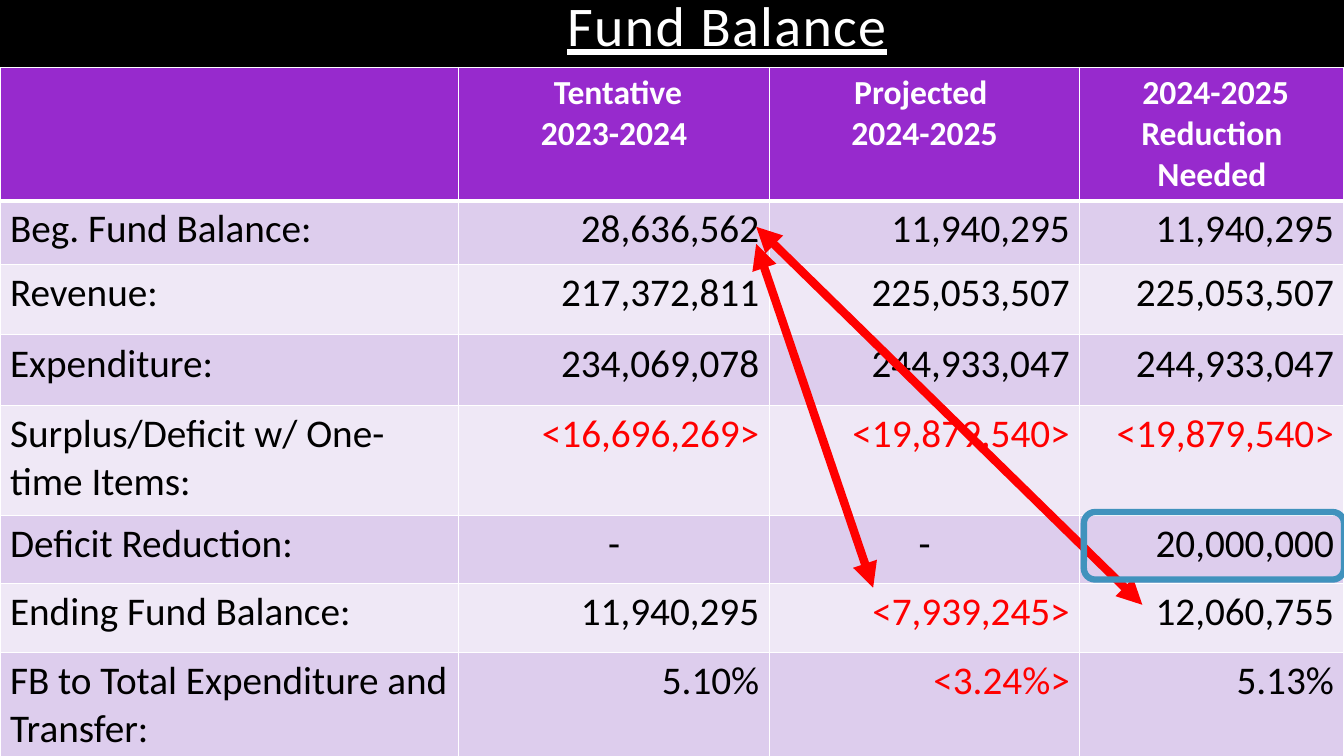
from lxml.etree import SubElement
from pptx import Presentation
from pptx.dml.color import RGBColor
from pptx.enum.shapes import MSO_CONNECTOR, MSO_SHAPE
from pptx.enum.text import MSO_ANCHOR, PP_ALIGN
from pptx.oxml.ns import qn
from pptx.util import Inches, Pt

WHITE, BLACK, RED = "FFFFFF", "000000", "FF0000"
PURPLE, LILAC, PALE_LILAC, BLUE = "972ACD", "DDCDED", "EFE8F6", "4092BD"

COLUMN_WIDTHS = [4.55, 3.08, 3.08, 2.62]
ROW_HEIGHTS = [1.25, 0.63, 0.7, 0.7, 1.09, 0.68, 0.68, 1.09]
ROWS = [
    ["", " Tentative\n2023-2024", "Projected \n2024-2025", " 2024-2025\nReduction Needed"],
    ["Beg. Fund Balance:", "28,636,562", "11,940,295", "11,940,295"],
    ["Revenue:", "217,372,811", "225,053,507", "225,053,507"],
    ["Expenditure:", "234,069,078", "244,933,047", "244,933,047"],
    ["Surplus/Deficit w/ One-time Items:", "<16,696,269>", "<19,879,540>", "<19,879,540>"],
    ["Deficit Reduction:", "-", "-", "20,000,000"],
    ["Ending Fund Balance:", "11,940,295", "<7,939,245>", "12,060,755"],
    ["FB to Total Expenditure and Transfer:", "5.10%", "<3.24%>", "5.13%"],
]


def color(value):
    return RGBColor.from_string(value)


def write(frame, text, size, ink, align, bold=False, underline=False):
    """Fill a text frame, one paragraph per line of text."""
    frame.text = text
    for para in frame.paragraphs:
        para.alignment = align
        para.font.size = Pt(size)
        for span in para.runs:
            span.font.name = "Calibri"
            span.font.size = Pt(size)
            span.font.bold = bold
            span.font.underline = underline
            span.font.color.rgb = color(ink)


deck = Presentation()
deck.slide_width, deck.slide_height = Inches(13.33), Inches(7.5)
page = deck.slides.add_slide(deck.slide_layouts[5])
page.background.fill.solid()
page.background.fill.fore_color.rgb = color(BLACK)

# Title
title = page.shapes.title
title.left, title.top = Inches(1.25), Inches(0.05)
title.width, title.height = Inches(11.92), Inches(0.58)
write(title.text_frame, "Fund Balance", 40, WHITE, PP_ALIGN.CENTER, underline=True)
title.text_frame.vertical_anchor = MSO_ANCHOR.BOTTOM
title_para = title.text_frame.paragraphs[0]
title_para.line_spacing = 0.9
title_para.runs[0].font._element.set("spc", "100")

# Fund table
table = page.shapes.add_table(
    len(ROWS), len(COLUMN_WIDTHS), Inches(0), Inches(0.67),
    Inches(sum(COLUMN_WIDTHS)), Inches(sum(ROW_HEIGHTS))).table
for column, width in zip(table.columns, COLUMN_WIDTHS):
    column.width = Inches(width)
for row, height in zip(table.rows, ROW_HEIGHTS):
    row.height = Inches(height)

for r, texts in enumerate(ROWS):
    for c, text in enumerate(texts):
        cell = table.cell(r, c)
        properties = cell._tc.get_or_add_tcPr()
        for side in "LRTB":
            under_header = (r, side) in [(0, "B"), (1, "T")]
            border = SubElement(properties, qn(f"a:ln{side}"), w=str(Pt(3 if under_header else 1)))
            border_fill = SubElement(border, qn("a:solidFill"))
            SubElement(border_fill, qn("a:srgbClr"), val=WHITE)
        cell.fill.solid()
        if r == 0:
            cell.fill.fore_color.rgb = color(PURPLE)
            write(cell.text_frame, text, 24, WHITE, PP_ALIGN.CENTER, bold=True)
            continue
        cell.fill.fore_color.rgb = color(LILAC if r % 2 else PALE_LILAC)
        if c == 0:
            align = PP_ALIGN.LEFT
        else:
            align = PP_ALIGN.CENTER if text == "-" else PP_ALIGN.RIGHT
        write(cell.text_frame, text, 28, RED if text.startswith("<") else BLACK, align)

# Arrows from the beginning balance to the two ending balances
for start_y, end_x, end_y in [(2.42, 8.66, 5.83), (2.25, 11.33, 6)]:
    arrow = page.shapes.add_connector(
        MSO_CONNECTOR.STRAIGHT, Inches(7.5), Inches(start_y), Inches(end_x), Inches(end_y))
    arrow.line.color.rgb = color(RED)
    arrow.line.width = Pt(6)
    for end in ("headEnd", "tailEnd"):
        SubElement(arrow.line._get_or_add_ln(), qn(f"a:{end}"), type="triangle")
    SubElement(arrow._element.spPr, qn("a:effectLst"))

# Frame around the deficit reduction
highlight = page.shapes.add_shape(
    MSO_SHAPE.ROUNDED_RECTANGLE, Inches(10.75), Inches(5.08), Inches(2.58), Inches(0.67))
highlight.shadow.inherit = False
highlight.fill.background()
highlight.line.color.rgb = color(BLUE)
highlight.line.width = Pt(4.5)

deck.save("out.pptx")
